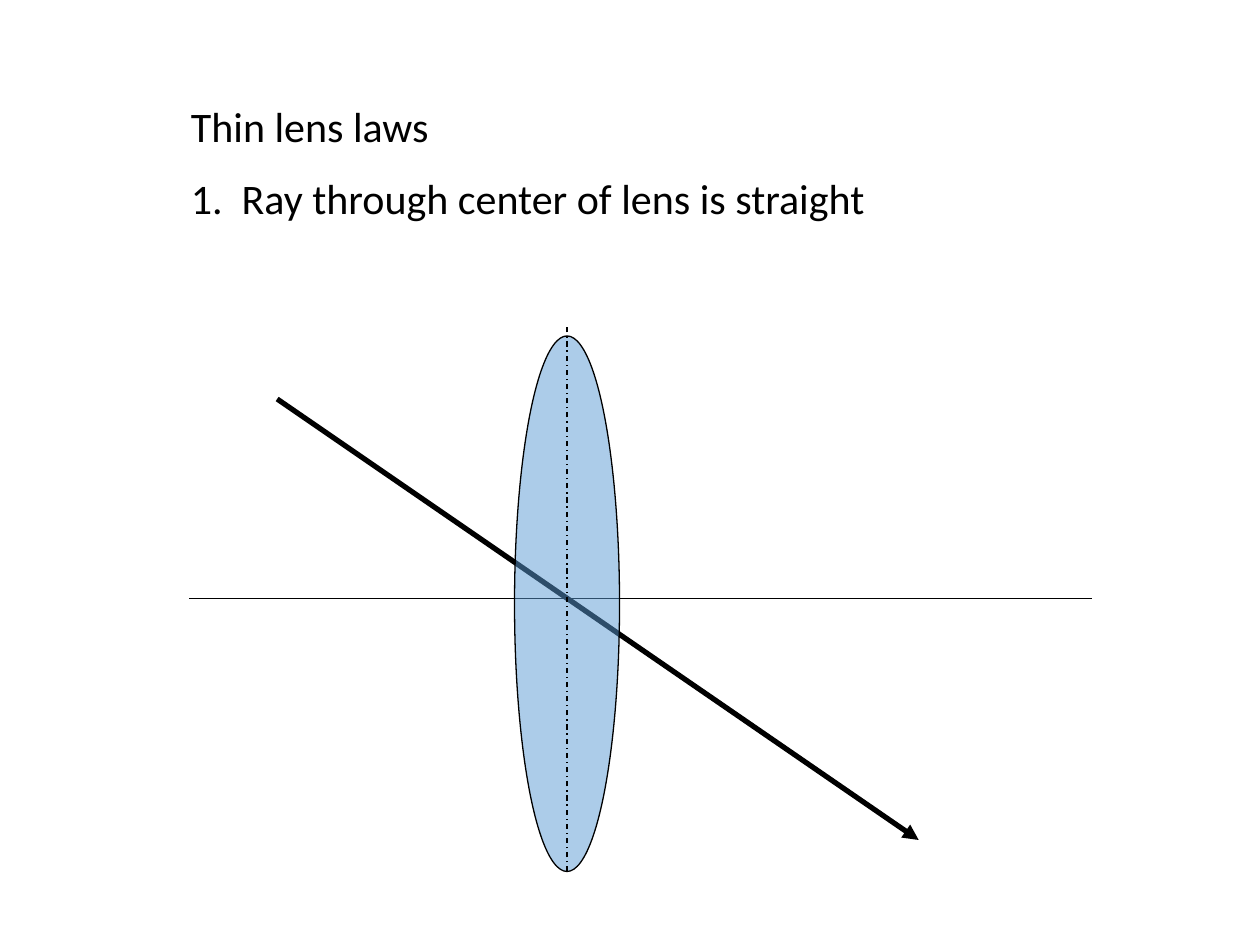
from dataclasses import dataclass

from lxml import etree
from pptx import Presentation
from pptx.dml.color import RGBColor
from pptx.enum.dml import MSO_LINE
from pptx.enum.shapes import MSO_CONNECTOR, MSO_SHAPE
from pptx.enum.text import MSO_AUTO_SIZE
from pptx.oxml.ns import qn
from pptx.util import Inches, Pt

STRAIGHT = MSO_CONNECTOR.STRAIGHT
ELLIPSE = MSO_SHAPE.OVAL
DASH_DOT = MSO_LINE.DASH_DOT
GROW = MSO_AUTO_SIZE.SHAPE_TO_FIT_TEXT


@dataclass(frozen=True)
class Theme:
    ink: RGBColor = RGBColor(0x00, 0x00, 0x00)
    glass: RGBColor = RGBColor(0x5B, 0x9B, 0xD5)
    glass_alpha: int = 50
    font: str = "Calibri"
    size: int = 24
    thin: float = 0.75
    thick: float = 3


THEME = Theme()
COLS, ROWS = 120, 90  # grid of the slide, 12 cells to the inch
LAWS = ["Thin lens laws", "1.  Ray through center of lens is straight"]


def cell(n):
    return Inches(n / 12)


def add_line(s, box, start, end, width=THEME.thin, dash=None, arrow=False):
    """Line between two points given in cells from the box's corner."""
    x, y = box[:2]
    ends = (x + start[0], y + start[1], x + end[0], y + end[1])
    line = s.shapes.add_connector(STRAIGHT, *map(cell, ends))
    line.line.color.rgb = THEME.ink
    line.line.width = Pt(width)
    if dash:
        line.line.dash_style = dash
    if arrow:
        ln = line.line._get_or_add_ln()
        etree.SubElement(ln, qn("a:tailEnd"), type="triangle")
    etree.SubElement(line._element.spPr, qn("a:effectLst"))


def add_laws(s, box):
    """Heading and law, one paragraph each."""
    tf = s.shapes.add_textbox(*map(cell, box)).text_frame
    tf.word_wrap = True
    tf.auto_size = GROW
    font = {"name": THEME.font, "size": Pt(THEME.size)}
    for i, text in enumerate(LAWS):
        p = tf.add_paragraph() if i else tf.paragraphs[0]
        if i:
            p.space_before = Pt(THEME.size / 2)
        r = p.add_run()
        r.text = text
        for key, value in font.items():
            setattr(r.font, key, value)
        r.font.color.rgb = THEME.ink


def add_lens(s, box, left, top, width, height):
    """Half-transparent lens, placed in cells from the box's corner."""
    place = (box[0] + left, box[1] + top, width, height)
    sp = s.shapes.add_shape(ELLIPSE, *map(cell, place))
    sp.shadow.inherit = False
    sp.fill.solid()
    sp.fill.fore_color.rgb = THEME.glass
    color = sp._element.spPr.find(f"{qn('a:solidFill')}/{qn('a:srgbClr')}")
    etree.SubElement(color, qn("a:alpha"), val=str(THEME.glass_alpha * 1000))
    sp.line.color.rgb = THEME.ink
    sp.line.width = Pt(THEME.thin)


def add_ray_diagram(s, box):
    """Optical axis, ray, lens and lens plane."""
    width, height = box[2:]
    center_x, center_y = 36, height / 2
    lens_width = 10
    add_line(s, box, (0, center_y), (width, center_y))
    add_line(s, box, (8.4, 7), (69.5, 49), THEME.thick, arrow=True)
    add_lens(s, box, center_x - lens_width / 2, 1, lens_width, height - 1)
    add_line(s, box, (center_x, height), (center_x, 0), dash=DASH_DOT)


def main():
    prs = Presentation()
    prs.slide_width, prs.slide_height = cell(COLS), cell(ROWS)
    s = prs.slides.add_slide(prs.slide_layouts[6])
    # Boxes: left, top, width, height in cells
    add_laws(s, (17, 9, 86, 28.7))
    add_ray_diagram(s, (18, 31, 86, 52))
    prs.save("out.pptx")


if __name__ == "__main__":
    main()
